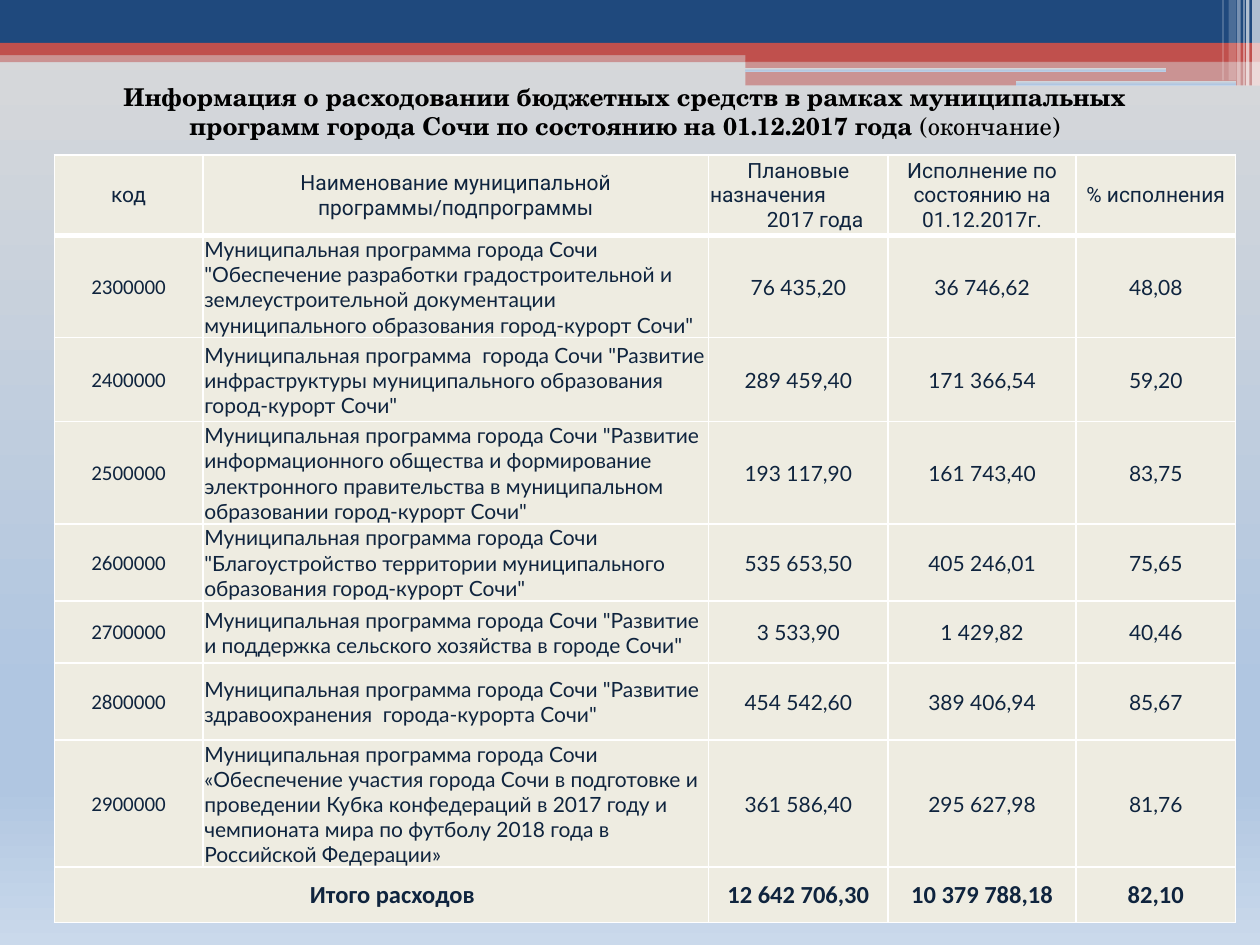
from dataclasses import dataclass

from lxml.etree import SubElement
from pptx import Presentation
from pptx.dml.color import RGBColor
from pptx.enum.shapes import MSO_SHAPE as Shape
from pptx.enum.text import MSO_ANCHOR as Anchor, MSO_AUTO_SIZE as AutoSize, PP_ALIGN as Align
from pptx.oxml.ns import qn
from pptx.util import Pt


@dataclass(frozen=True)
class Theme:
    navy: str = "1F497D"
    red: str = "C0504D"
    white: str = "FFFFFF"
    black: str = "000000"
    ink: str = "0F243E"
    cell: str = "EEECE1"
    sky: tuple = ((0, "D9D9D9"), (74, "B0C6E1"), (83, "B0C6E1"), (100, "CAD9EB"))
    title_font: str = "TeX Gyre Schola"
    head_font: str = "Roboto"
    code_font: str = "Calibri"
    body_font: str = "Lato"
    title_size: float = 14
    body_size: float = 12
    total_size: float = 14


class SlideBuilder:
    def __init__(self, s, theme):
        self.s, self.theme = s, theme

    def gradient(self, fill, owner):
        """Give fill the vertical sky gradient; owner is the XML element that holds it."""
        fill.gradient()
        fill.gradient_angle = 270
        stops = next(owner.iter(qn("a:gsLst")))
        for old in list(stops):
            stops.remove(old)
        for pos, color in self.theme.sky:
            stop = SubElement(stops, qn("a:gs"), pos=str(pos * 1000))
            SubElement(stop, qn("a:srgbClr"), val=color)

    def background(self):
        self.gradient(self.s.background.fill, self.s._element)

    def shape(self, kind, x, y, w, h):
        sp = self.s.shapes.add_shape(kind, Pt(x), Pt(y), Pt(w), Pt(h))
        sp.shadow.inherit = False
        sp.line.fill.background()
        return sp

    def band(self, x, y, w, h, color, opacity=100):
        sp = self.shape(Shape.RECTANGLE, x, y, w, h)
        sp.fill.solid()
        sp.fill.fore_color.rgb = RGBColor.from_string(color)
        if opacity < 100:
            clr = next(sp._element.spPr.iter(qn("a:srgbClr")))
            SubElement(clr, qn("a:alpha"), val=str(opacity * 1000))

    def slot(self, x, y, w, h):
        """Rounded cut-out that shows the sky through the red band."""
        sp = self.shape(Shape.ROUNDED_RECTANGLE, x, y, w, h)
        self.gradient(sp.fill, sp._element.spPr)

    def style_run(self, r, font, size, color, bold=False):
        r.font.name, r.font.size, r.font.bold = font, Pt(size), bold
        r.font.color.rgb = RGBColor.from_string(color)

    def title(self, x, y, w, h, strong, light):
        t = self.theme
        tf = self.s.shapes.add_textbox(Pt(x), Pt(y), Pt(w), Pt(h)).text_frame
        tf.word_wrap = True
        tf.auto_size = AutoSize.SHAPE_TO_FIT_TEXT
        p = tf.paragraphs[0]
        p.alignment = Align.CENTER
        for text, bold in ((strong, True), (light, False)):
            r = p.add_run()
            r.text = text
            self.style_run(r, t.title_font, t.title_size, t.black, bold)

    def table(self, x, y, widths, heights):
        frame = self.s.shapes.add_table(len(heights), len(widths), Pt(x), Pt(y),
                                        Pt(sum(widths)), Pt(sum(heights)))
        table = frame.table
        table.first_row = table.horz_banding = False
        for col, w in zip(table.columns, widths):
            col.width = Pt(w)
        for row, h in zip(table.rows, heights):
            row.height = Pt(h)
        return table

    def cell(self, cell, text, font, size, bold=False, align=Align.CENTER, top=1, bottom=1):
        t = self.theme
        cell.fill.solid()
        cell.fill.fore_color.rgb = RGBColor.from_string(t.cell)
        cell.vertical_anchor = Anchor.MIDDLE
        cell.margin_left = cell.margin_right = cell.margin_top = Pt(0.75)
        cell.margin_bottom = 0
        cell.text_frame.text = text
        for p in cell.text_frame.paragraphs:
            p.alignment = align
            for r in p.runs:
                self.style_run(r, font, size, t.ink, bold)
        self.borders(cell, {"L": 1, "R": 1, "T": top, "B": bottom})

    def borders(self, cell, widths):
        tc_pr = cell._tc.get_or_add_tcPr()
        for i, (side, width) in enumerate(widths.items()):
            ln = SubElement(tc_pr, qn(f"a:ln{side}"), w=str(Pt(width)))
            SubElement(SubElement(ln, qn("a:solidFill")), qn("a:srgbClr"), val=self.theme.white)
            tc_pr.insert(i, ln)

    def indent(self, p, left):
        p._p.get_or_add_pPr().set("marL", str(Pt(left)))


HEADER = ["код", "Наименование муниципальной программы/подпрограммы",
          "Плановые\nназначения\n2017 года",
          "Исполнение по состоянию на 01.12.2017г.", "% исполнения"]
PROGRAMS = [
    ("2300000", 'Муниципальная программа города Сочи "Обеспечение разработки градостроительной и '
     'землеустроительной документации муниципального образования город-курорт Сочи"',
     "76 435,20", "36 746,62", "48,08"),
    ("2400000", 'Муниципальная программа  города Сочи "Развитие инфраструктуры '
     'муниципального образования город-курорт Сочи"',
     "289 459,40", "171 366,54", "59,20"),
    ("2500000", 'Муниципальная программа города Сочи "Развитие информационного общества и формирование '
     'электронного правительства в муниципальном образовании город-курорт Сочи"',
     "193 117,90", "161 743,40", "83,75"),
    ("2600000", 'Муниципальная программа города Сочи "Благоустройство территории '
     'муниципального образования город-курорт Сочи"',
     "535 653,50", "405 246,01", "75,65"),
    ("2700000", 'Муниципальная программа города Сочи "Развитие и поддержка сельского хозяйства '
     'в городе Сочи"',
     "3 533,90", "1 429,82", "40,46"),
    ("2800000", 'Муниципальная программа города Сочи "Развитие здравоохранения  города-курорта Сочи"',
     "454 542,60", "389 406,94", "85,67"),
    ("2900000", "Муниципальная программа города Сочи «Обеспечение участия города Сочи в подготовке и "
     "проведении Кубка конфедераций в 2017 году и чемпионата мира по футболу 2018 года в "
     "Российской Федерации»",
     "361 586,40", "295 627,98", "81,76"),
]
TOTAL = ["Итого расходов", "", "12 642 706,30", "10 379 788,18", "82,10"]
COLUMN_WIDTHS = [85, 289, 102.5, 107.5, 91]
ROW_HEIGHTS = [46, 57.5, 48, 58.5, 44, 35.5, 44, 72.5, 31.5]
# left, width, height, opacity of the glints in the top right corner
GLINTS = [(715.5, 4.5, 49, 65), (712, 2, 49, 65), (710.5, 0.7, 49, 60),
          (707, 2, 49, 40), (702, 4.5, 46, 20), (698.5, 0.7, 46, 30)]


def draw_banner(b):
    t = b.theme
    b.band(0, 29, 720, 6.5, t.red, 50)
    b.band(0, 0, 720, 24.5, t.navy)
    b.band(0, 24.5, 720, 7, t.red)
    b.band(426, 28, 294, 7.2, t.red)
    b.band(426, 34.5, 294, 14.3, t.red, 50)
    b.slot(425.5, 38.9, 241.2, 2.2)
    b.slot(580.5, 46.1, 126, 2.9)
    for x, w, h, opacity in GLINTS:
        b.band(x, 0, w, h, t.white, opacity)


def fill_table(b, table):
    t = b.theme
    for c, text in enumerate(HEADER):
        b.cell(table.cell(0, c), text, t.head_font, t.body_size, bottom=3)
    _, assigned, year = table.cell(0, 2).text_frame.paragraphs
    assigned.alignment = year.alignment = Align.LEFT
    b.indent(year, 32.5)

    for r, program in enumerate(PROGRAMS, 1):
        for c, text in enumerate(program):
            b.cell(table.cell(r, c), text, t.body_font if c else t.code_font, t.body_size,
                   align=Align.LEFT if c == 1 else Align.CENTER, top=3 if r == 1 else 1)

    last = len(ROW_HEIGHTS) - 1
    for c, text in enumerate(TOTAL):
        b.cell(table.cell(last, c), text, t.code_font, t.total_size, bold=True)
    table.cell(last, 0).merge(table.cell(last, 1))
    b.indent(table.cell(last, 0).text_frame.paragraphs[0], 12.5)


def main():
    prs = Presentation()
    prs.slide_width, prs.slide_height = Pt(720), Pt(540)
    b = SlideBuilder(prs.slides.add_slide(prs.slide_layouts[6]), Theme())
    b.background()
    draw_banner(b)
    fill_table(b, b.table(31, 88.5, COLUMN_WIDTHS, ROW_HEIGHTS))
    b.title(36.7, 43.2, 640.8, 41, "Информация о расходовании бюджетных средств в рамках муниципальных "
            "программ города Сочи по состоянию на 01.12.2017 года ", "(окончание)")
    prs.save("out.pptx")


if __name__ == "__main__":
    main()
